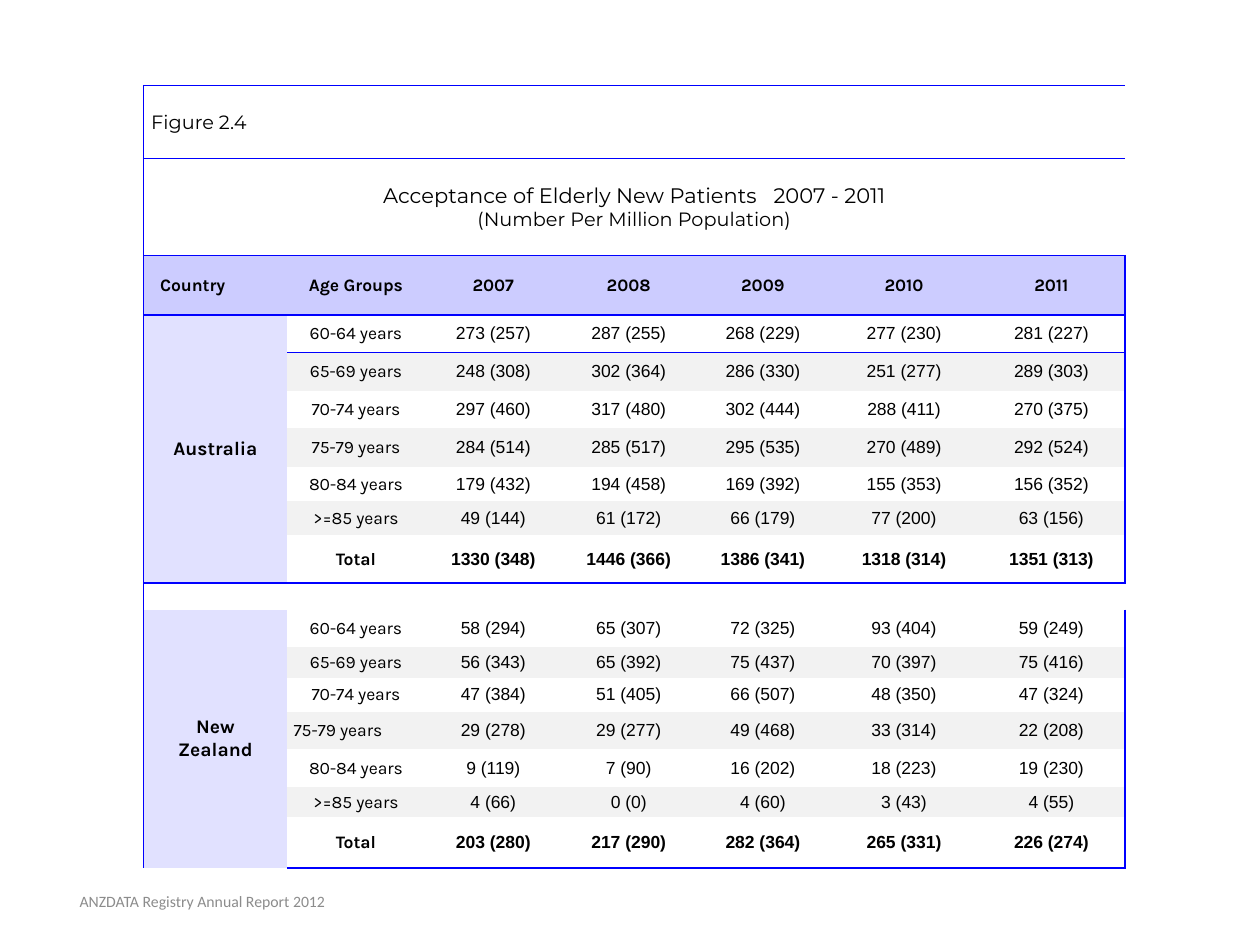
import lxml.etree
import pptx
import pptx.dml.color
import pptx.enum.text
import pptx.oxml.ns
import pptx.util

Inches = pptx.util.Inches
Pt = pptx.util.Pt
RGB = pptx.dml.color.RGBColor.from_string
qn = pptx.oxml.ns.qn
ALIGN = pptx.enum.text.PP_ALIGN
MIDDLE = pptx.enum.text.MSO_ANCHOR.MIDDLE

THEME = {
    "text": "000000", "footer": "8C8C8C", "border": "0000FF",
    "header": "CCCCFF", "country": "E1E1FF", "band": "F2F2F2",
    "title_font": "Montserrat", "label_font": "Karla",
    "number_font": "Arial", "footer_font": "Calibri",
    "title_size": 12, "subtitle_size": 11, "body_size": 10,
    "footer_size": 9, "spacer_size": 6,
}
NO_TABLE_STYLE = "{2D5ABB26-0587-4C30-8999-92F81FD0307C}"

YEARS = ["2007", "2008", "2009", "2010", "2011"]
AGES = ["60-64 years", "65-69 years", "70-74 years", "75-79 years",
        "80-84 years", ">=85 years", "Total"]
ACCEPTANCES = {
    "Australia": [
        ["273 (257)", "287 (255)", "268 (229)", "277 (230)", "281 (227)"],
        ["248 (308)", "302 (364)", "286 (330)", "251 (277)", "289 (303)"],
        ["297 (460)", "317 (480)", "302 (444)", "288 (411)", "270 (375)"],
        ["284 (514)", "285 (517)", "295 (535)", "270 (489)", "292 (524)"],
        ["179 (432)", "194 (458)", "169 (392)", "155 (353)", "156 (352)"],
        ["49 (144)", "61 (172)", "66 (179)", "77 (200)", "63 (156)"],
        ["1330 (348)", "1446 (366)", "1386 (341)", "1318 (314)", "1351 (313)"],
    ],
    "New\nZealand": [
        ["58 (294)", "65 (307)", "72 (325)", "93 (404)", "59 (249)"],
        ["56 (343)", "65 (392)", "75 (437)", "70 (397)", "75 (416)"],
        ["47 (384)", "51 (405)", "66 (507)", "48 (350)", "47 (324)"],
        ["29 (278)", "29 (277)", "49 (468)", "33 (314)", "22 (208)"],
        ["9 (119)", "7 (90)", "16 (202)", "18 (223)", "19 (230)"],
        ["4 (66)", "0 (0)", "4 (60)", "3 (43)", "4 (55)"],
        ["203 (280)", "217 (290)", "282 (364)", "265 (331)", "226 (274)"],
    ],
}
COLUMN_WIDTHS = [1.14, 1.09, 1.09, 1.06, 1.07, 1.17, 1.17]
ROW_HEIGHTS = [0.58, 0.77, 0.47,
               0.3, 0.3, 0.3, 0.31, 0.27, 0.27, 0.38,
               0.21,
               0.3, 0.24, 0.27, 0.3, 0.3, 0.24, 0.4]
HEADER_ROW, SPACER_ROW = 2, 10
LAST_ROW, LAST_COLUMN = len(ROW_HEIGHTS) - 1, len(COLUMN_WIDTHS) - 1


def write(frame, text, font, size, bold=False, color="text", align=ALIGN.CENTER):
    """Fill a text frame, one paragraph per line, in a single style."""
    frame.text = text
    style = {"name": THEME[font], "size": Pt(THEME[size]), "bold": bold}
    for paragraph in frame.paragraphs:
        paragraph.alignment = align
        for run in paragraph.runs:
            for attribute, value in style.items():
                setattr(run.font, attribute, value)
            run.font.color.rgb = RGB(THEME[color])


def draw_border(cell, side):
    line = lxml.etree.SubElement(cell._tc.get_or_add_tcPr(), qn(f"a:ln{side}"), w=str(Pt(1)))
    fill = lxml.etree.SubElement(line, qn("a:solidFill"))
    lxml.etree.SubElement(fill, qn("a:srgbClr"), val=THEME["border"])


deck = pptx.Presentation()
deck.slide_width, deck.slide_height = Inches(10), Inches(7.5)
slide = deck.slides.add_slide(deck.slide_layouts[6])

# Table grid
table_frame = slide.shapes.add_table(
    len(ROW_HEIGHTS), len(COLUMN_WIDTHS), Inches(1.14), Inches(0.68),
    Inches(sum(COLUMN_WIDTHS)), Inches(sum(ROW_HEIGHTS)))
table = table_frame.table
table.first_row = table.horz_banding = False
table._tbl.tblPr.find(qn("a:tableStyleId")).text = NO_TABLE_STYLE
for column, width in zip(table.columns, COLUMN_WIDTHS):
    column.width = Inches(width)
for row, height in zip(table.rows, ROW_HEIGHTS):
    row.height = Inches(height)

# Margins and rules of every cell
cell_format = {"margin_left": Inches(0.02), "margin_right": Inches(0.02),
               "margin_top": Inches(0.01), "margin_bottom": Inches(0.01),
               "vertical_anchor": MIDDLE}
for r in range(LAST_ROW + 1):
    for c in range(LAST_COLUMN + 1):
        cell = table.cell(r, c)
        for attribute, value in cell_format.items():
            setattr(cell, attribute, value)
        edges = {"L": c == 0, "R": c == LAST_COLUMN,
                 "T": r <= HEADER_ROW + 1,
                 "B": r <= HEADER_ROW or r == LAST_ROW}
        for side, is_ruled in edges.items():
            if is_ruled:
                draw_border(cell, side)
        cell.fill.background()

# Figure number and title
for r in (0, 1, SPACER_ROW):
    table.cell(r, 0).merge(table.cell(r, LAST_COLUMN))
figure_number = table.cell(0, 0)
figure_number.margin_left = Inches(0.06)
write(figure_number.text_frame, "Figure 2.4", "title_font", "subtitle_size", align=ALIGN.LEFT)

title = table.cell(1, 0).text_frame
write(title, "Acceptance of Elderly New Patients\n(Number Per Million Population)",
      "title_font", "subtitle_size")
heading = title.paragraphs[0]
gap, period = heading.add_run(), heading.add_run()
gap.text, period.text = " ", "2007 - 2011"
for run in heading.runs:
    run.font.name = THEME["title_font"]
    run.font.size = Pt(THEME["title_size"])
    run.font.color.rgb = RGB(THEME["text"])
gap._r.get_or_add_rPr().set("spc", "630")  # widens the gap before the years

# Column headings
for c, label in enumerate(["Country", "Age Groups"] + YEARS):
    cell = table.cell(HEADER_ROW, c)
    cell.fill.solid()
    cell.fill.fore_color.rgb = RGB(THEME["header"])
    write(cell.text_frame, label, "label_font", "body_size", bold=True,
          align=ALIGN.CENTER if c else ALIGN.LEFT)
table.cell(HEADER_ROW, 0).margin_left = Inches(0.13)

# One block of age groups per country
for first_row, (country, rows) in zip((HEADER_ROW + 1, SPACER_ROW + 1), ACCEPTANCES.items()):
    country_cell = table.cell(first_row, 0)
    country_cell.merge(table.cell(first_row + len(AGES) - 1, 0))
    country_cell.fill.solid()
    country_cell.fill.fore_color.rgb = RGB(THEME["country"])
    write(country_cell.text_frame, country, "label_font", "subtitle_size", bold=True)
    for i, (age, values) in enumerate(zip(AGES, rows)):
        for c, text in enumerate([age] + values, start=1):
            cell = table.cell(first_row + i, c)
            if i % 2:
                cell.fill.solid()
                cell.fill.fore_color.rgb = RGB(THEME["band"])
            write(cell.text_frame, text, "label_font" if c == 1 else "number_font",
                  "body_size", bold=age == "Total")

# This one age label stands at the left of its cell
left_label = table.cell(SPACER_ROW + 1 + AGES.index("75-79 years"), 1)
left_label.margin_left = Inches(0.05)
left_label.text_frame.paragraphs[0].alignment = ALIGN.LEFT

# Small type in empty cells keeps the row heights
for cell in table.iter_cells():
    paragraph = cell.text_frame.paragraphs[0]
    if not paragraph.runs:
        lxml.etree.SubElement(paragraph._p, qn("a:endParaRPr"),
                              sz=str(THEME["spacer_size"] * 100))

# Footer
footer = slide.shapes.add_textbox(Inches(0.02), Inches(6.95), Inches(3.17), Inches(0.4)).text_frame
footer.word_wrap = True
footer.vertical_anchor = MIDDLE
write(footer, "ANZDATA Registry Annual Report 2012", "footer_font", "footer_size", color="footer")

deck.save("out.pptx")
